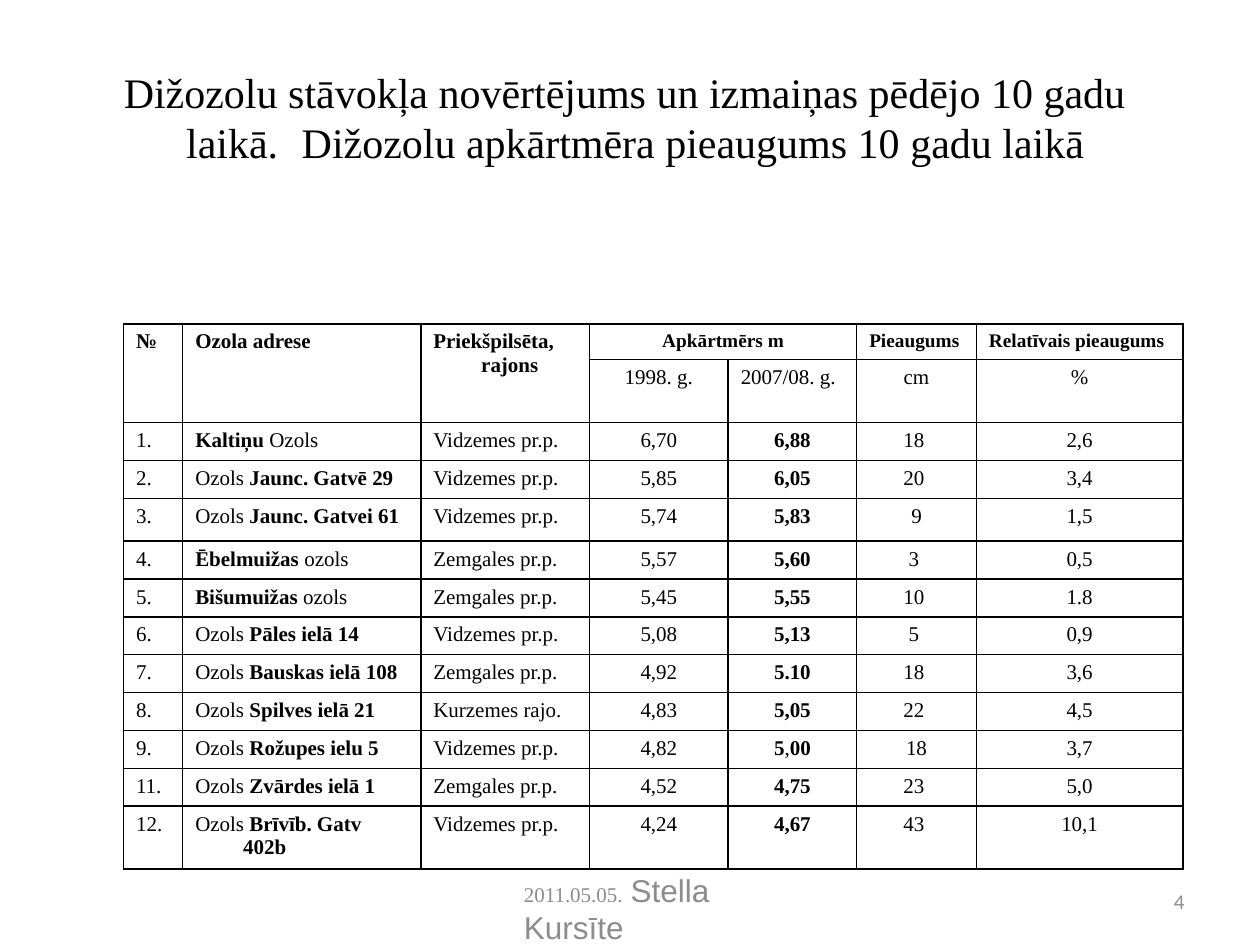
from dataclasses import dataclass

import lxml.etree
import pptx
import pptx.dml.color
import pptx.enum.text
import pptx.oxml.ns
import pptx.util

Inches = pptx.util.Inches
ALIGN = pptx.enum.text.PP_ALIGN
MIDDLE = pptx.enum.text.MSO_ANCHOR.MIDDLE
COLORS = {"text": "000000", "border": "000000", "muted": "8C8C8C"}
SERIF = "Times New Roman"
COL_WIDTHS = (0.47, 1.89, 1.34, 1.1, 1.02, 0.95, 1.64)
ROW_HEIGHTS = (0.28, 0.47, 0.28, 0.28, 0.34) + (0.28,) * 7 + (0.47,)
OAK_ALIGNS = (ALIGN.LEFT,) * 3 + (ALIGN.CENTER,) * 4
HANGING = Inches(0.38)


@dataclass
class HeaderCell:
    row: int
    col: int
    text: str
    align: ALIGN = ALIGN.LEFT
    size: float = 12
    rows: int = 1
    cols: int = 1


@dataclass
class Oak:
    number: str
    address: str
    district: str
    girth_1998: str
    girth_2008: str
    growth_cm: str
    growth_pct: str

    def texts(self) -> tuple:
        return (self.number, self.address, self.district, self.girth_1998,
                self.girth_2008, self.growth_cm, self.growth_pct)


HEADERS = [
    HeaderCell(0, 0, "*№*", rows=2),
    HeaderCell(0, 1, "*Ozola adrese *", ALIGN.JUSTIFY, rows=2),
    HeaderCell(0, 2, "*Priekšpilsēta, rajons*", ALIGN.JUSTIFY, rows=2),
    HeaderCell(0, 3, "*Apkārtmērs m*", ALIGN.CENTER, 11, cols=2),
    HeaderCell(0, 5, "*Pieaugums*", size=11),
    HeaderCell(0, 6, "*Relatīvais pieaugums*", size=11),
    HeaderCell(1, 3, "1998. g.", ALIGN.CENTER),
    HeaderCell(1, 4, "2007/08. g.", ALIGN.JUSTIFY),
    HeaderCell(1, 5, "cm", ALIGN.CENTER),
    HeaderCell(1, 6, "%", ALIGN.CENTER),
]

OAKS = [
    Oak("1.", "*Kaltiņu *Ozols", "Vidzemes pr.p.", "6,70", "*6,88*", "18 ", "2,6"),
    Oak("2.", "Ozols *Jaunc. Gatvē 29*", "Vidzemes pr.p.", "5,85", "*6,05*", "20 ", "3,4"),
    Oak("3.", "Ozols *Jaunc. Gatvei 61*", "Vidzemes pr.p.", "5,74", "*5,83*", "9", "1,5"),
    Oak("4.", "*Ēbelmuižas* ozols", "Zemgales pr.p.", "5,57", "*5,60*", "3 ", "0,5"),
    Oak("5.", "*Bišumuižas *ozols", "Zemgales pr.p.", "5,45", "*5,55*", "10 ", "1.8"),
    Oak("6.", "Ozols* Pāles ielā 14*", "Vidzemes pr.p.", "5,08", "*5,13*", "5 ", "0,9"),
    Oak("7.", "Ozols *Bauskas ielā 108*", "Zemgales pr.p.", "4,92", "*5.10*", "18 ", "3,6"),
    Oak("8.", "Ozols *Spilves ielā 21*", "Kurzemes rajo.", "4,83", "*5,05*", "22 ", "4,5"),
    Oak("9.", "Ozols *Rožupes ielu 5*", "Vidzemes pr.p.", "4,82", "*5*,*00*", "18", "3,7"),
    Oak("11.", "Ozols *Zvārdes ielā 1*", "Zemgales pr.p.", "4,52", "*4,75*", "23 ", "5,0"),
    Oak("12.", "Ozols *Brīvīb. Gatv 402b*", "Vidzemes pr.p.", "4,24", "*4,67*", "43 ", "10,1"),
]


def add_run(p, text: str, size: float, font: str = SERIF,
            color: str = "text", bold: bool = False) -> None:
    r = p.add_run()
    r.text = text
    r.font.size = pptx.util.Pt(size)
    r.font.name = font
    r.font.bold = bold
    r.font.color.rgb = pptx.dml.color.RGBColor.from_string(COLORS[color])


def write_cell(cell, text: str, align: ALIGN, size: float = 12) -> None:
    p = cell.text_frame.paragraphs[0]
    p.alignment = align
    pPr = p._p.get_or_add_pPr()
    pPr.set("marL", str(HANGING))
    pPr.set("indent", str(-HANGING))
    for i, part in enumerate(text.split("*")):
        if part:
            add_run(p, part, size, bold=i % 2 == 1)


def style_cell(cell) -> None:
    qn = pptx.oxml.ns.qn
    tcPr = cell._tc.get_or_add_tcPr()
    for side in ("a:lnL", "a:lnR", "a:lnT", "a:lnB"):
        ln = lxml.etree.SubElement(tcPr, qn(side), w=str(pptx.util.Pt(1)))
        fill = lxml.etree.SubElement(ln, qn("a:solidFill"))
        lxml.etree.SubElement(fill, qn("a:srgbClr"), val=COLORS["border"])
    cell.fill.background()


def add_title(s) -> None:
    sp = s.shapes.title
    sp.left, sp.top, sp.width, sp.height = map(Inches, (0.5, 0.3, 9, 1.25))
    tf = sp.text_frame
    tf.word_wrap = True
    tf.auto_size = pptx.enum.text.MSO_AUTO_SIZE.NONE
    tf.vertical_anchor = MIDDLE
    p = tf.paragraphs[0]
    p.alignment = ALIGN.CENTER
    add_run(p, "Dižozolu stāvokļa novērtējums un izmaiņas pēdējo 10 gadu ", 24)
    p.add_line_break()
    add_run(p, " laikā.\tDižozolu apkārtmēra pieaugums 10 gadu laikā", 24)


def add_table(s) -> None:
    frame = s.shapes.add_table(
        len(ROW_HEIGHTS), len(COL_WIDTHS), Inches(0.98), Inches(2.57),
        Inches(sum(COL_WIDTHS)), Inches(sum(ROW_HEIGHTS)))
    table = frame.table
    table.first_row = table.horz_banding = False
    for col, width in zip(table.columns, COL_WIDTHS):
        col.width = Inches(width)
    for row, height in zip(table.rows, ROW_HEIGHTS):
        row.height = Inches(height)
    for cell in table.iter_cells():
        style_cell(cell)
    for h in HEADERS:
        cell = table.cell(h.row, h.col)
        if h.rows > 1 or h.cols > 1:
            cell.merge(table.cell(h.row + h.rows - 1, h.col + h.cols - 1))
        write_cell(cell, h.text, h.align, h.size)
    for row, oak in enumerate(OAKS, start=2):
        for col, (text, align) in enumerate(zip(oak.texts(), OAK_ALIGNS)):
            write_cell(table.cell(row, col), text, align)


def add_footer(s, left: float, top: float, height: float, align: ALIGN, runs: list) -> None:
    sp = s.shapes.add_textbox(Inches(left), Inches(top), Inches(2.33), Inches(height))
    tf = sp.text_frame
    tf.word_wrap = True
    tf.vertical_anchor = MIDDLE
    p = tf.paragraphs[0]
    p.alignment = align
    for text, size, font in runs:
        add_run(p, text, size, font, "muted")


def main() -> None:
    prs = pptx.Presentation()
    prs.slide_width, prs.slide_height = Inches(10), Inches(7.5)
    s = prs.slides.add_slide(prs.slide_layouts[5])
    add_footer(s, 4.06, 7.06, 0.3, ALIGN.LEFT, [
        ("2011.05.05.", 12, SERIF), (" ", 18, SERIF), ("Stella Kursīte", 18, "Arial")])
    add_footer(s, 7.17, 6.95, 0.4, ALIGN.RIGHT, [("4", 12, "Calibri")])
    add_title(s)
    add_table(s)
    prs.save("out.pptx")


if __name__ == "__main__":
    main()
